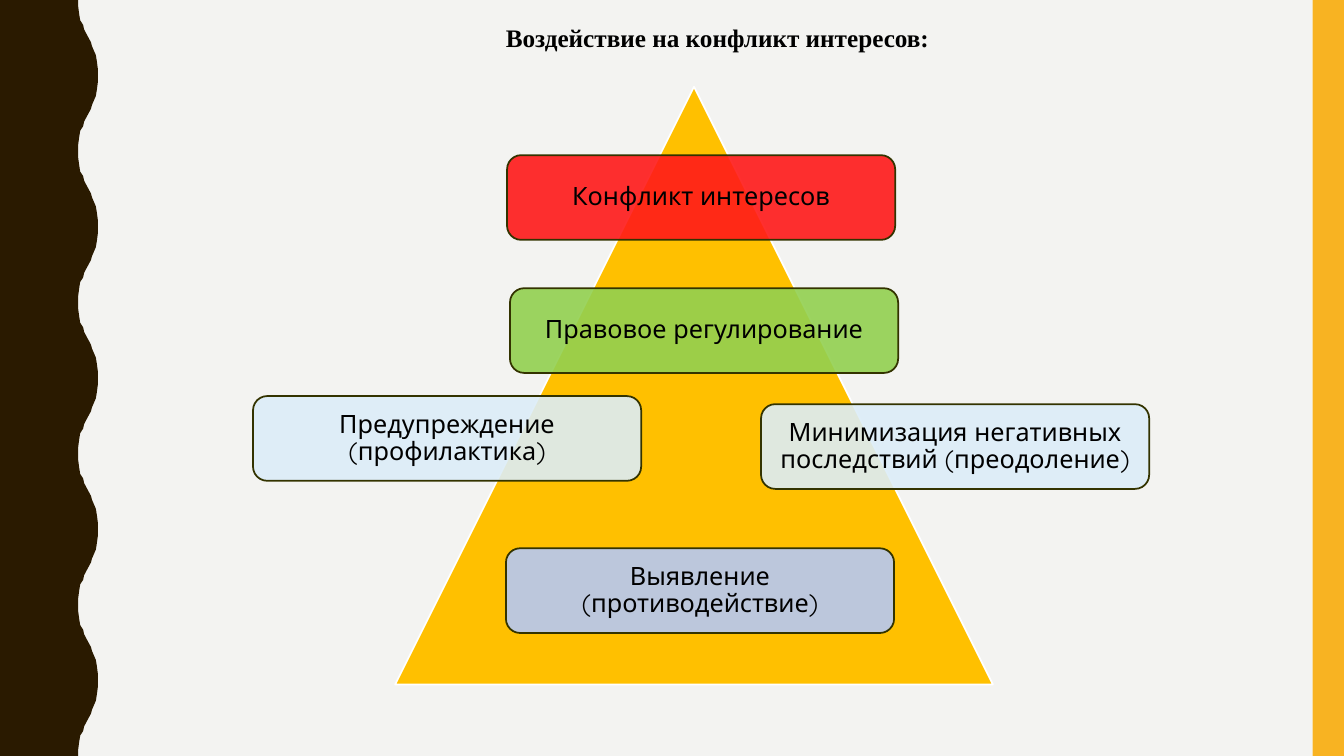
from lxml import etree
from pptx import Presentation, util as u
from pptx.dml.color import RGBColor
from pptx.enum import shapes as s, text as t
from pptx.oxml.ns import qn

WIDE, HIGH = u.Inches(13.333), u.Inches(7.5)
SLIDE = (0, 0, WIDE, HIGH)
HALVES = 10
# One half wave: share of the strip's width, share of the half wave's height
CURVE = [(0.8, 0), (0.8, 0.09), (0.81, 0.19), (0.82, 0.27), (0.85, 0.33),
         (0.86, 0.39), (0.88, 0.44), (0.93, 0.56), (0.94, 0.61), (0.96, 0.67),
         (0.98, 0.73), (0.99, 0.81), (1, 0.91), (1, 1)]
CARD = (28.88, 11.2)
CARDS = [
    ("Конфликт интересов", 37.73, 20.53, "FF1919"),
    ("Правовое регулирование", 37.95, 38.13, "92D050"),
    ("Предупреждение (профилактика)", 18.83, 52.4, "DCEDF8"),
    ("Минимизация негативных последствий (преодоление)", 56.63, 53.47, "DCEDF8"),
    ("Выявление (противодействие)", 37.65, 72.53, "B5C8F5"),
]


def part(box, x, y, w, h):
    """Return the part of a box given in percent of its size."""
    left, top, wide, high = box
    return (left + round(wide * x / 100), top + round(high * y / 100),
            round(wide * w / 100), round(high * h / 100))


def color(form, code):
    form.rgb = RGBColor.from_string(code)


def paint(shape, fill, line=None, alpha=None):
    shape.shadow.inherit = False
    shape.fill.solid()
    color(shape.fill.fore_color, fill)
    if alpha:
        tone = shape.fill._xPr.find(".//" + qn("a:srgbClr"))
        etree.SubElement(tone, qn("a:alpha"), val=str(alpha * 1000))
    if line:
        color(shape.line.color, line)
        shape.line.width = u.Pt(1.25)
    else:
        shape.line.fill.background()


def write(shape, words, frame, para, font):
    """Fill a shape with one paragraph, formatted by three dicts."""
    body = shape.text_frame
    line = body.paragraphs[0]
    run = line.add_run()
    run.text = words
    for item, form in ((body, frame), (line, para), (run.font, font)):
        for name, value in form.items():
            setattr(item, name, value)
    color(run.font.color, "000000")


def wave(slide, box):
    left, top, wide, high = box
    half = high / HALVES
    edge = []
    for n in range(HALVES):
        if n % 2:
            turn = [(x, 1 - y) for x, y in reversed(CURVE)]
        else:
            turn = CURVE
        edge += [(left + x * wide, top + (n + y) * half) for x, y in turn]
    pen = slide.shapes.build_freeform(left, top)
    pen.add_line_segments(edge + [(left, top + high)])
    paint(pen.convert_to_shape(), "2A1A00")


def back(slide, box):
    for x, w, fill in ((0, 97.67, "F3F3F1"), (97.67, 2.33, "F8B322")):
        area = part(box, x, 0, w, 100)
        paint(slide.shapes.add_shape(s.MSO_SHAPE.RECTANGLE, *area), fill)
    wave(slide, part(box, 0, 0, 7.28, 100))


def title(slide, box):
    label = slide.shapes.add_textbox(*box)
    write(label, "Воздействие на конфликт интересов:", {"word_wrap": True}, {},
          {"name": "Times New Roman", "size": u.Pt(18), "bold": True})


def card(slide, box, words, fill):
    shape = slide.shapes.add_shape(s.MSO_SHAPE.ROUNDED_RECTANGLE, *box)
    paint(shape, fill, "333300", 90)
    frame = {"margin_" + side: u.Inches(0.11)
             for side in ("left", "top", "right", "bottom")}
    frame.update(word_wrap=True, vertical_anchor=t.MSO_ANCHOR.MIDDLE)
    write(shape, words, frame,
          {"alignment": t.PP_ALIGN.CENTER, "line_spacing": 0.9},
          {"name": "Quicksand", "size": u.Pt(18)})


def chart(slide, box):
    """Draw the pyramid and the cards that lie on it."""
    area = part(box, 29.4, 11.47, 44.48, 79.07)
    peak = slide.shapes.add_shape(s.MSO_SHAPE.ISOSCELES_TRIANGLE, *area)
    paint(peak, "FFC000", "FFFFFF")
    for words, x, y, fill in CARDS:
        card(slide, part(box, x, y, *CARD), words, fill)


def main():
    deck = Presentation()
    deck.slide_width, deck.slide_height = WIDE, HIGH
    slide = deck.slides.add_slide(deck.slide_layouts[6])
    back(slide, SLIDE)
    title(slide, part(SLIDE, 36.9, 2.27, 44.93, 5.33))
    chart(slide, SLIDE)
    deck.save("out.pptx")


if __name__ == "__main__":
    main()
